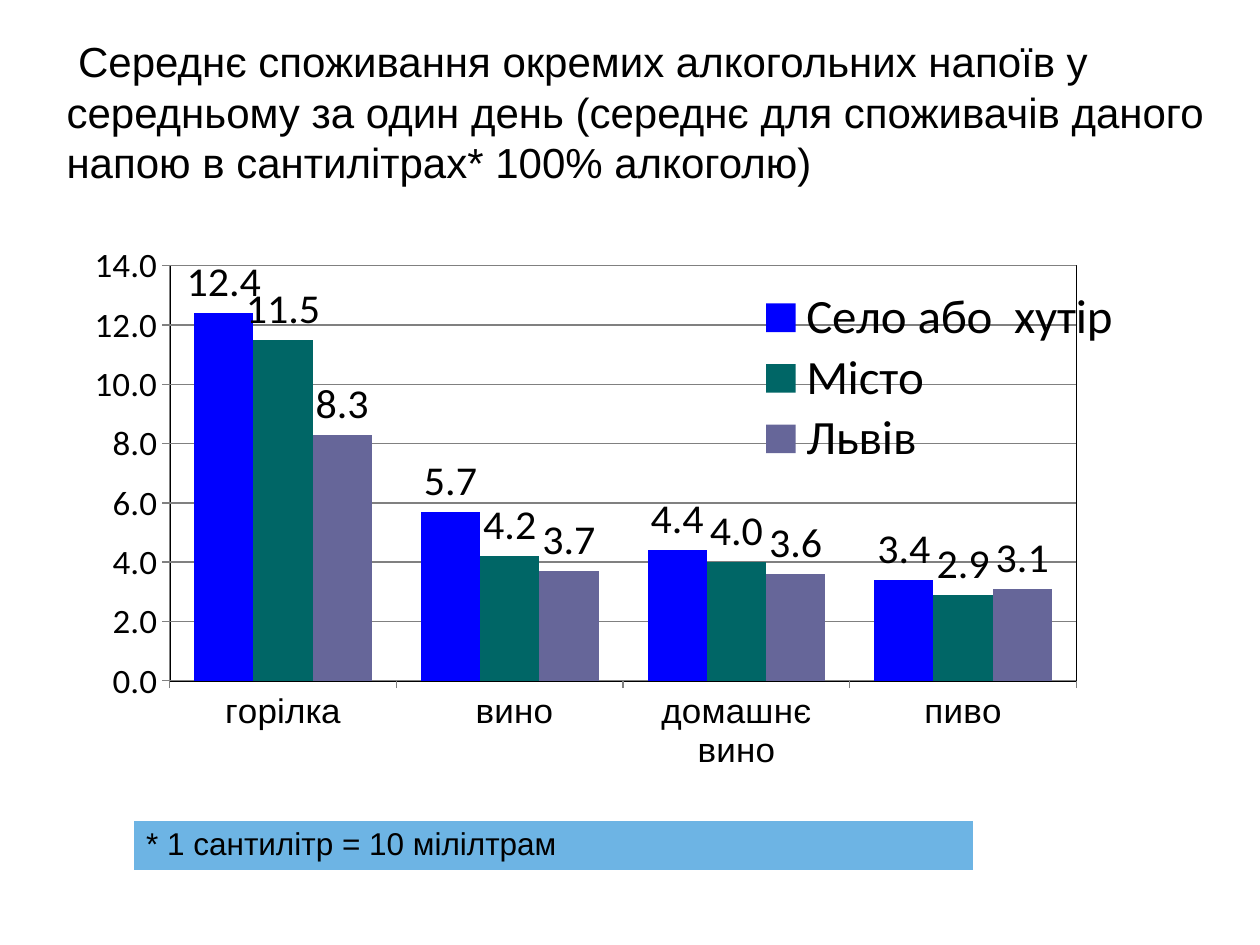
from dataclasses import dataclass

from lxml import etree
from pptx import Presentation
from pptx import util as u
from pptx.chart.data import CategoryChartData
from pptx.dml.color import RGBColor
from pptx.enum import chart as ch
from pptx.enum import text
from pptx.oxml import parse_xml
from pptx.oxml.ns import nsdecls, qn


@dataclass(frozen=True)
class Theme:
    text_font: str = "Arial"
    chart_font: str = "Calibri"
    ink: str = "000000"
    paper: str = "FFFFFF"
    grid: str = "808080"
    note_fill: str = "6DB4E4"
    series: tuple = ("0000FF", "006666", "666699")
    title: float = 24
    note: float = 18
    axis: float = 20
    label: float = 24
    legend: float = 28


def rgb(value):
    return RGBColor.from_string(value)


def box(*lengths):
    return [u.Inches(n) for n in lengths]


def manual_layout(x, y, w, h, inner=False):
    """Return a c:layout element in fractions of the chart area."""
    target = '<c:layoutTarget val="inner"/>' if inner else ""
    return parse_xml(
        f'<c:layout {nsdecls("c")}><c:manualLayout>{target}'
        '<c:xMode val="edge"/><c:yMode val="edge"/>'
        f'<c:x val="{x}"/><c:y val="{y}"/><c:w val="{w}"/><c:h val="{h}"/>'
        '</c:manualLayout></c:layout>')


class SlideBuilder:
    def __init__(self, prs, theme):
        self.theme = theme
        self.slide = prs.slides.add_slide(prs.slide_layouts[6])

    def set_font(self, font, name, size):
        font.name = name
        font.size = u.Pt(size)
        font.bold = False
        font.color.rgb = rgb(self.theme.ink)

    def title(self, at, words):
        tf = self.slide.shapes.add_textbox(*box(*at)).text_frame
        tf.word_wrap = True
        tf.vertical_anchor = text.MSO_ANCHOR.MIDDLE
        p = tf.paragraphs[0]
        p.text = words
        self.set_font(p.font, self.theme.text_font, self.theme.title)

    def column_chart(self, at, categories, series):
        t = self.theme
        data = CategoryChartData(number_format="0.0")
        data.categories = categories
        for name, values in series.items():
            data.add_series(name, values)
        chart = self.slide.shapes.add_chart(
            ch.XL_CHART_TYPE.COLUMN_CLUSTERED, *box(*at), data).chart
        chart.has_title = False
        self.set_font(chart.font, t.chart_font, t.axis)

        plot = chart.plots[0]
        plot.gap_width, plot.overlap = 83, 0
        plot.vary_by_categories = False
        for s, color in zip(plot.series, t.series):
            s.format.fill.solid()
            s.format.fill.fore_color.rgb = rgb(color)
            s.invert_if_negative = False
        plot.has_data_labels = True
        labels = plot.data_labels
        labels.show_value = True
        labels.position = ch.XL_LABEL_POSITION.OUTSIDE_END
        labels.number_format, labels.number_format_is_linked = "0.0", False
        self.set_font(labels.font, t.chart_font, t.label)

        self.axis(chart.category_axis, t.text_font)
        value_axis = chart.value_axis
        self.axis(value_axis, t.chart_font)
        value_axis.minimum_scale, value_axis.maximum_scale = 0, 14
        value_axis.major_unit = 2
        value_axis.tick_labels.number_format = "0.0"
        value_axis.tick_labels.number_format_is_linked = False
        value_axis.has_major_gridlines = True
        value_axis.major_gridlines.format.line.color.rgb = rgb(t.grid)

        self.plot_area(chart, manual_layout(0.07, 0.04, 0.86, 0.81, inner=True))
        self.legend(chart, manual_layout(0.61, 0.08, 0.38, 0.36))

    def axis(self, axis, font_name):
        axis.major_tick_mark = ch.XL_TICK_MARK.OUTSIDE
        axis.minor_tick_mark = ch.XL_TICK_MARK.NONE
        axis.format.line.color.rgb = rgb(self.theme.grid)
        self.set_font(axis.tick_labels.font, font_name, self.theme.axis)

    def plot_area(self, chart, layout):
        """Place the plot and frame it with a thin line."""
        area = chart.element.find(".//" + qn("c:plotArea"))
        for old in area.findall(qn("c:layout")):
            area.remove(old)
        area.insert(0, layout)
        area.append(parse_xml(
            f'<c:spPr {nsdecls("c", "a")}><a:noFill/><a:ln w="12700"><a:solidFill>'
            f'<a:srgbClr val="{self.theme.ink}"/></a:solidFill></a:ln></c:spPr>'))

    def legend(self, chart, layout):
        chart.has_legend = True
        legend = chart.legend
        legend.position = ch.XL_LEGEND_POSITION.TOP
        legend.include_in_layout = False
        self.set_font(legend.font, self.theme.chart_font, self.theme.legend)
        element = chart.element.find(".//" + qn("c:legend"))
        for old in element.findall(qn("c:layout")):
            element.remove(old)
        element.find(qn("c:legendPos")).addnext(layout)

    def note(self, at, words):
        """Add a one-cell table holding a footnote."""
        table = self.slide.shapes.add_table(1, 1, *box(*at)).table
        cell = table.cell(0, 0)
        p = cell.text_frame.paragraphs[0]
        p.text = words
        self.set_font(p.font, self.theme.text_font, self.theme.note)
        tc_pr = cell._tc.get_or_add_tcPr()
        for side, width in (("L", 1), ("R", 1), ("T", 1), ("B", 3)):
            line = etree.SubElement(tc_pr, qn(f"a:ln{side}"), w=str(u.Pt(width)))
            fill = etree.SubElement(line, qn("a:solidFill"))
            etree.SubElement(fill, qn("a:srgbClr"), val=self.theme.paper)
        cell.fill.solid()
        cell.fill.fore_color.rgb = rgb(self.theme.note_fill)


def main():
    prs = Presentation()
    prs.slide_width, prs.slide_height = box(10, 7.5)
    page = SlideBuilder(prs, Theme())
    page.title(
        (0.43, 0.06, 9.57, 1.65),
        " Середнє споживання окремих алкогольних напоїв у середньому за один день "
        "(середнє для споживачів даного напою в сантилітрах* 100% алкоголю)")
    page.column_chart(
        (0.75, 1.94, 8.38, 4.17),
        ("горілка", " вино", "домашнє вино", "пиво"),
        {"Село або  хутір": (12.4, 5.7, 4.4, 3.4),
         "Місто": (11.5, 4.2, 4.0, 2.9),
         "Львів": (8.3, 3.7, 3.6, 3.1)})
    page.note((1.06, 6.51, 6.67, 0.41), "* 1 сантилітр = 10 мілілтрам")
    prs.save("out.pptx")


if __name__ == "__main__":
    main()
